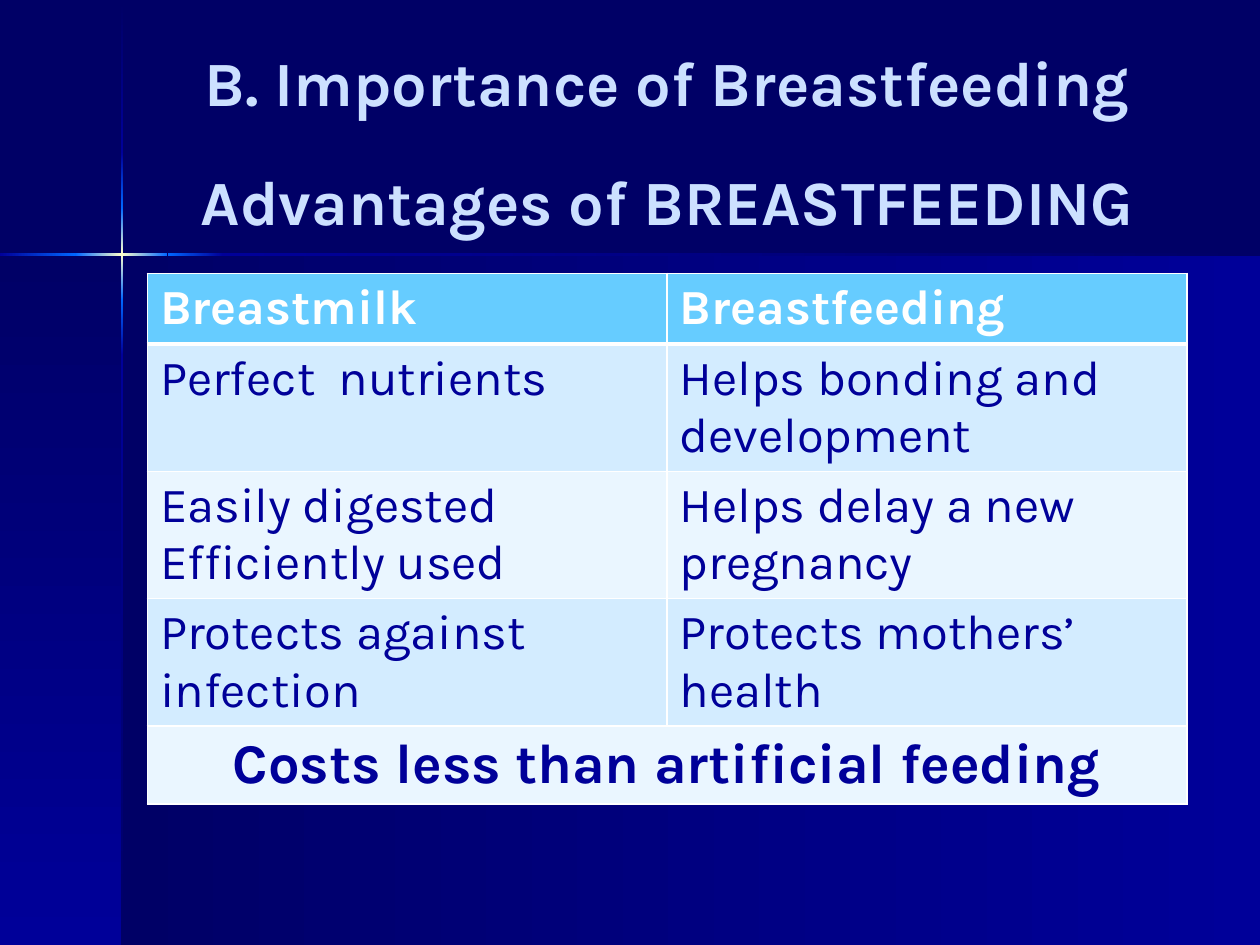
"""Build a slide on the advantages of breastfeeding."""
import lxml.etree
import pptx
import pptx.dml.color
import pptx.enum.shapes
import pptx.enum.text
import pptx.oxml.ns
import pptx.util

Inches = pptx.util.Inches
Pt = pptx.util.Pt
RGBColor = pptx.dml.color.RGBColor
CENTER = pptx.enum.text.PP_ALIGN.CENTER
qn = pptx.oxml.ns.qn

NIGHT = RGBColor(0x00, 0x00, 0x66)
DEEP = RGBColor(0x00, 0x00, 0x99)
GLOW = RGBColor(0x00, 0x66, 0xFF)
CREAM = RGBColor(0xFF, 0xFF, 0xCC)
PALE = RGBColor(0xCC, 0xE0, 0xFF)
WHITE = RGBColor(0xFF, 0xFF, 0xFF)
HEADER = RGBColor(0x66, 0xCC, 0xFF)
BAND_DARK = RGBColor(0xD3, 0xEC, 0xFF)
BAND_LIGHT = RGBColor(0xEA, 0xF6, 0xFF)

TITLE_FONT = {"name": "Karla", "size": Pt(36), "bold": True}
HEADER_FONT = {"name": "Karla", "size": Pt(28), "bold": True}
BODY_FONT = {"name": "Karla", "size": Pt(28), "bold": False}
TOTAL_FONT = {"name": "Karla", "size": Pt(32), "bold": True}

TITLE_LINES = ["B. Importance of Breastfeeding", "Advantages of BREASTFEEDING"]
ROWS = [
    ["Breastmilk", "Breastfeeding"],
    ["Perfect  nutrients", "Helps bonding and development"],
    ["Easily digested\nEfficiently used", "Helps delay a new pregnancy"],
    ["Protects against infection", "Protects mothers’ health"],
    ["Costs less than artificial feeding", ""],
]
ROW_HEIGHTS = [0.56, 1.01, 1.01, 1.01, 0.62]

BEAM_COLORS = [(NIGHT, DEEP), (DEEP, GLOW), (GLOW, CREAM, GLOW), (GLOW, DEEP), (DEEP, NIGHT)]
VERTICAL_STOPS = [0.01, 1.21, 1.65, 2.38, 2.82, 7.5]
HORIZONTAL_STOPS = [0, 0.6, 1.33, 1.77, 10]
BEAM_WIDTH = 0.02
CROSS_X, CROSS_Y = 0.97, 2.02


def format_paragraph(paragraph, font_values, color, alignment=None):
    """Apply font values, colour and alignment to a paragraph."""
    paragraph.alignment = alignment
    for run in paragraph.runs:
        for name, value in font_values.items():
            setattr(run.font, name, value)
        run.font.color.rgb = color


def add_gradient_panel(slide, left, top, width, height, colors, vertical):
    """Add a rectangle with evenly spaced gradient colours."""
    shape = slide.shapes.add_shape(
        pptx.enum.shapes.MSO_SHAPE.RECTANGLE,
        Inches(left), Inches(top), Inches(width), Inches(height),
    )
    shape.shadow.inherit = False
    shape.line.fill.background()
    shape.fill.gradient()
    shape.fill.gradient_angle = 270 if vertical else 0
    stop_list = next(shape._element.spPr.iter(qn("a:gsLst")))
    for stop in list(stop_list):
        stop_list.remove(stop)
    for index, color in enumerate(colors):
        position = str(100000 * index // (len(colors) - 1))
        stop = lxml.etree.SubElement(stop_list, qn("a:gs"), pos=position)
        lxml.etree.SubElement(stop, qn("a:srgbClr"), val=str(color))


def add_backdrop(slide):
    """Add the two panels and the crossing beams of light."""
    slide.background.fill.solid()
    slide.background.fill.fore_color.rgb = NIGHT
    height = 7.5 - CROSS_Y
    add_gradient_panel(slide, CROSS_X, CROSS_Y, 10 - CROSS_X, height, (NIGHT, DEEP), False)
    add_gradient_panel(slide, 0, CROSS_Y, CROSS_X, height, (NIGHT, DEEP), True)
    edge_x, edge_y = CROSS_X - BEAM_WIDTH / 2, CROSS_Y - BEAM_WIDTH / 2
    for start, end, colors in zip(VERTICAL_STOPS, VERTICAL_STOPS[1:], BEAM_COLORS):
        add_gradient_panel(slide, edge_x, start, BEAM_WIDTH, end - start, colors, True)
    for start, end, colors in zip(HORIZONTAL_STOPS, HORIZONTAL_STOPS[1:], BEAM_COLORS[1:]):
        add_gradient_panel(slide, start, edge_y, end - start, BEAM_WIDTH, colors, False)


def add_title(slide):
    """Place and format the two-line title."""
    title = slide.shapes.title
    placement = {"left": 1.17, "top": 0.33, "width": 8.25, "height": 1.57}
    for name, value in placement.items():
        setattr(title, name, Inches(value))
    frame = title.text_frame
    frame.text = "\n".join(TITLE_LINES)
    frame.vertical_anchor = pptx.enum.text.MSO_ANCHOR.MIDDLE
    frame.auto_size = pptx.enum.text.MSO_AUTO_SIZE.NONE
    for paragraph in frame.paragraphs:
        paragraph.space_before = Pt(0)
        format_paragraph(paragraph, TITLE_FONT, PALE, CENTER)
    frame.paragraphs[1].space_before = Pt(25)


def set_borders(cell, widths):
    """Draw white borders of the given point widths on a cell."""
    properties = cell._tc.get_or_add_tcPr()
    for side, width in widths.items():
        line = lxml.etree.SubElement(properties, qn(f"a:ln{side}"), w=str(Pt(width)))
        fill = lxml.etree.SubElement(line, qn("a:solidFill"))
        lxml.etree.SubElement(fill, qn("a:srgbClr"), val=str(WHITE))


def add_advantages_table(slide):
    """Add the banded table with a merged closing row."""
    table = slide.shapes.add_table(
        len(ROWS), 2, Inches(1.17), Inches(2.17), Inches(8.25), Inches(sum(ROW_HEIGHTS))
    ).table
    last = len(ROWS) - 1
    for row_index, texts in enumerate(ROWS):
        table.rows[row_index].height = Inches(ROW_HEIGHTS[row_index])
        is_header, is_total = row_index == 0, row_index == last
        band = HEADER if is_header else BAND_DARK if row_index % 2 else BAND_LIGHT
        font_values = HEADER_FONT if is_header else TOTAL_FONT if is_total else BODY_FONT
        top, bottom = 3 if row_index == 1 else 1, 3 if is_header else 1
        for column_index, text in enumerate(texts):
            cell = table.cell(row_index, column_index)
            set_borders(cell, {"L": 1, "R": 1, "T": top, "B": bottom})
            cell.fill.solid()
            cell.fill.fore_color.rgb = band
            cell.text_frame.text = text
            for paragraph in cell.text_frame.paragraphs:
                format_paragraph(
                    paragraph, font_values, WHITE if is_header else DEEP,
                    CENTER if is_total else None,
                )
    table.cell(last, 0).merge(table.cell(last, 1))


def main():
    """Build and save the presentation."""
    presentation = pptx.Presentation()
    presentation.slide_width = Inches(10)
    presentation.slide_height = Inches(7.5)
    slide = presentation.slides.add_slide(presentation.slide_layouts[5])
    add_backdrop(slide)
    add_title(slide)
    add_advantages_table(slide)
    presentation.save("out.pptx")


if __name__ == "__main__":
    main()
